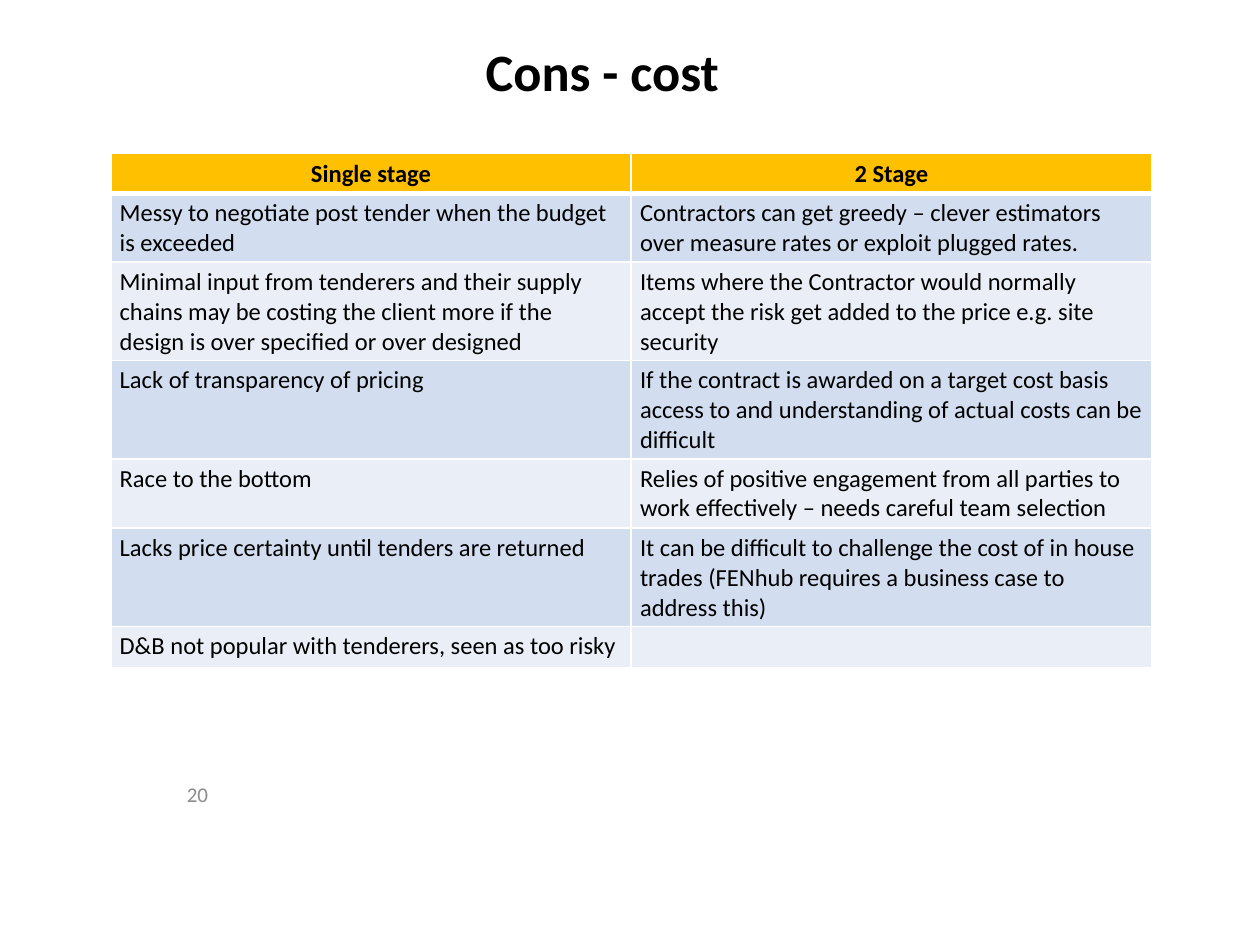
from lxml import etree
from pptx import Presentation
from pptx.dml.color import RGBColor
from pptx.enum.text import MSO_ANCHOR, PP_ALIGN
from pptx.oxml.ns import qn
from pptx.util import Inches, Pt

LEFT, CENTER, RIGHT = PP_ALIGN.LEFT, PP_ALIGN.CENTER, PP_ALIGN.RIGHT
MIDDLE = MSO_ANCHOR.MIDDLE

HEAD = ("Single stage", "2 Stage")
ROWS = [
    ("Messy to negotiate post tender when the budget is exceeded",
     "Contractors can get greedy – clever estimators over measure rates or exploit plugged rates."),
    ("Minimal input from tenderers and their supply chains may be costing the client more "
     "if the design is over specified or over designed",
     "Items where the Contractor would normally accept the risk get added to the price "
     "e.g. site security"),
    ("Lack of transparency of pricing",
     "If the contract is awarded on a target cost basis access to and understanding of "
     "actual costs can be difficult"),
    ("Race to the bottom",
     "Relies of positive engagement from all parties to work effectively – needs careful "
     "team selection"),
    ("Lacks price certainty until tenders are returned",
     "It can be difficult to challenge the cost of in house trades (FENhub requires a "
     "business case to address this)"),
    ("D&B not popular with tenderers, seen as too risky", ""),
]
HEIGHTS = (0.3, 0.53, 0.75, 0.75, 0.55, 0.75, 0.33)


def color(code):
    return RGBColor.from_string(code)


class Deck:
    font = "Calibri"
    ink = "000000"
    gold = "FFC000"
    bands = ("D2DEEF", "EAEFF7")
    rule = "FFFFFF"

    def __init__(self, slide):
        self.slide = slide

    def put(self, frame, text, size, align, bold=False, ink=ink):
        para = frame.paragraphs[0]
        para.alignment = align
        if not text:
            # Keeps an empty cell at the height of one text line
            end = etree.SubElement(para._p, qn("a:endParaRPr"))
            end.set("sz", str(size * 100))
            return
        run = para.add_run()
        run.text = text
        run.font.name = self.font
        run.font.size = Pt(size)
        run.font.bold = bold
        run.font.color.rgb = color(ink)

    def label(self, box, text, size, align, **style):
        frame = self.slide.shapes.add_textbox(*map(Inches, box)).text_frame
        frame.word_wrap = True
        frame.vertical_anchor = MIDDLE
        self.put(frame, text, size, align, **style)

    def edge(self, cell, side, width):
        line = etree.SubElement(cell._tc.get_or_add_tcPr(), qn("a:ln" + side))
        line.set("w", str(Pt(width)))
        fill = etree.SubElement(line, qn("a:solidFill"))
        etree.SubElement(fill, qn("a:srgbClr")).set("val", self.rule)

    def table(self, box, rows, heights):
        shape = self.slide.shapes.add_table(len(rows), len(rows[0]), *map(Inches, box))
        grid = shape.table
        for r, (texts, height) in enumerate(zip(rows, heights)):
            grid.rows[r].height = Inches(height)
            head = r == 0
            thick = {0: "B", 1: "T"}.get(r)
            for c, text in enumerate(texts):
                cell = grid.cell(r, c)
                cell.margin_left = cell.margin_right = Inches(0.07)
                cell.margin_top = cell.margin_bottom = Inches(0.04)
                for side in "LRTB":
                    self.edge(cell, side, 3 if side == thick else 1)
                cell.fill.solid()
                cell.fill.fore_color.rgb = color(self.gold if head else self.bands[(r - 1) % 2])
                self.put(cell.text_frame, text, 14, CENTER if head else LEFT, bold=head)


def main():
    prs = Presentation()
    prs.slide_width, prs.slide_height = Inches(10), Inches(7.5)
    deck = Deck(prs.slides.add_slide(prs.slide_layouts[6]))

    # Page number and title
    deck.label((0, 6.15, 1.75, 0.3), "20", 12, RIGHT, ink="8C8C8C")
    deck.label((1.22, 0.12, 7.12, 0.88), "Cons - cost", 30, CENTER, bold=True)

    # Comparison of the two tender routes
    deck.table((0.88, 1.22, 8.26, 4.05), [HEAD, *ROWS], HEIGHTS)

    prs.save("out.pptx")


if __name__ == "__main__":
    main()
